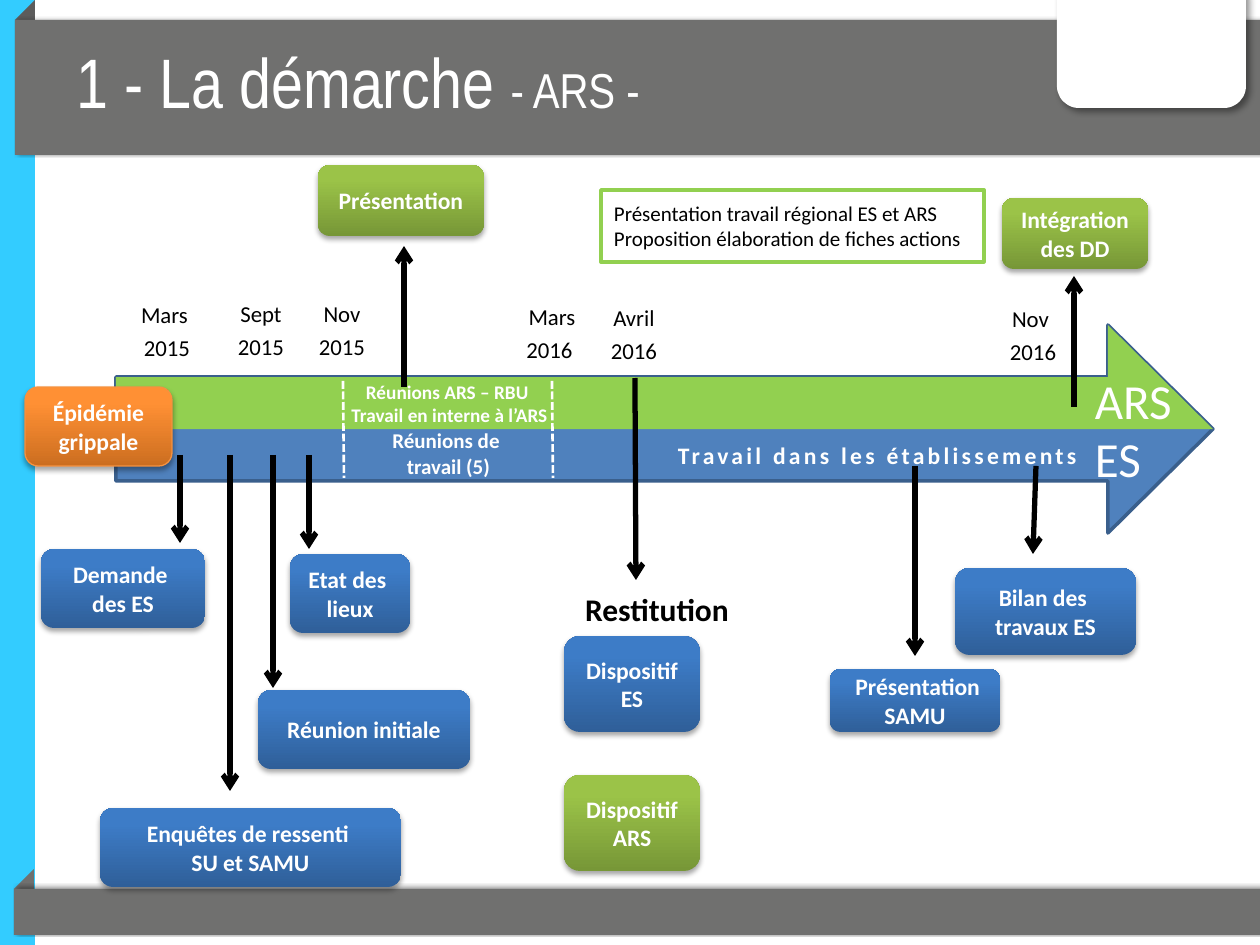
import lxml.etree
import pptx
import pptx.dml.color
import pptx.enum.dml
import pptx.enum.shapes
import pptx.enum.text
import pptx.oxml.ns
import pptx.util

SCALE = 914400 / 126  # EMU in one px
RGB = pptx.dml.color.RGBColor
SHAPE = pptx.enum.shapes.MSO_SHAPE
ALIGN = pptx.enum.text.PP_ALIGN
ANCHOR = pptx.enum.text.MSO_ANCHOR
WHITE, BLACK = RGB(0xFF, 0xFF, 0xFF), RGB(0, 0, 0)
CYAN, GREY, DARK_GREY = RGB(0x33, 0xCC, 0xFF), RGB(0x70, 0x70, 0x6F), RGB(0x5C, 0x5C, 0x5C)
GREEN, BLUE, NAVY = RGB(0x92, 0xD0, 0x50), RGB(0x4F, 0x81, 0xBD), RGB(0x3A, 0x5F, 0x8C)
ORANGE_EDGE = RGB(0xF6, 0x92, 0x40)
# Gradients: bottom colour, top colour
BLUE_FADE = RGB(0x2F, 0x5F, 0x99), RGB(0x3D, 0x7C, 0xC7)
GREEN_FADE = RGB(0x77, 0x97, 0x37), RGB(0x9B, 0xC3, 0x48)
ORANGE_FADE = RGB(0xCC, 0x6E, 0x20), RGB(0xFF, 0x90, 0x34)
# Shadows: opacity %, blur pt, distance pt, direction in degrees
CARD_SHADOW = 35, 3.1, 1.8, 90


def px(length):
    return pptx.util.Emu(round(length * SCALE))


def inside(box, left, top, width, height):
    return box[0] + left, box[1] + top, width, height


def add_element(parent, tag, **attributes):
    element = lxml.etree.SubElement(parent, pptx.oxml.ns.qn(tag))
    for name, value in attributes.items():
        element.set(name, str(value))
    return element


def style_shape(shape, fill, line=None, line_width=2, shadow=None):
    if isinstance(fill, RGB):
        shape.fill.solid()
        shape.fill.fore_color.rgb = fill
    else:
        shape.fill.gradient()
        shape.fill.gradient_angle = 90
        for stop, position, color in zip(shape.fill.gradient_stops, (0, 0.8), fill):
            stop.position = position
            stop.color.rgb = color
    if line is None:
        shape.line.fill.background()
    else:
        shape.line.color.rgb = line
        shape.line.width = pptx.util.Pt(line_width)
    shape.shadow.inherit = False
    if shadow:
        opacity, blur, distance, direction = shadow
        effects = shape._element.spPr.find(pptx.oxml.ns.qn("a:effectLst"))
        outer = add_element(effects, "a:outerShdw", blurRad=round(blur * 12700),
                            dist=round(distance * 12700), dir=direction * 60000, rotWithShape=0)
        color = add_element(outer, "a:srgbClr", val="000000")
        add_element(color, "a:alpha", val=opacity * 1000)


def add_preset(slide, kind, box, fill, **style):
    shape = slide.shapes.add_shape(kind, *map(px, box))
    style_shape(shape, fill, **style)
    return shape


def add_outline(slide, points, fill):
    builder = slide.shapes.build_freeform(*points[0], scale=SCALE)
    builder.add_line_segments(points[1:], close=True)
    style_shape(builder.convert_to_shape(), fill)


def write(shape, lines, size, color=WHITE, bold=False, align=ALIGN.CENTER, anchor=ANCHOR.MIDDLE,
          insets=(13, 6), font="Calibri", line_spacing=None, space_after=None, tracking=None):
    """Each line is a text, or a list of (text, size) runs."""
    frame = shape.text_frame
    frame.word_wrap = True
    frame.vertical_anchor = anchor
    frame.margin_left = frame.margin_right = px(insets[0])
    frame.margin_top = frame.margin_bottom = px(insets[1])
    for index, line in enumerate(lines):
        paragraph = frame.add_paragraph() if index else frame.paragraphs[0]
        paragraph.alignment = align
        if line_spacing:
            paragraph.line_spacing = line_spacing
            paragraph.space_after = pptx.util.Pt(space_after)
        for text, run_size in ([(line, size)] if isinstance(line, str) else line):
            run = paragraph.add_run()
            run.text = text
            run.font.name, run.font.size = font, pptx.util.Pt(run_size)
            run.font.bold, run.font.color.rgb = bold, color
            if tracking:
                run._r.get_or_add_rPr().set("spc", str(tracking))


def add_label(slide, box, lines, size, **style):
    write(slide.shapes.add_textbox(*map(px, box)), lines, size, **style)


def add_card(slide, box, lines, fade, line=None):
    card = add_preset(slide, SHAPE.ROUNDED_RECTANGLE, box, fade,
                      line=line, line_width=0.75, shadow=CARD_SHADOW)
    write(card, lines, 13.5, bold=True, insets=(9, 5))


def add_line(slide, box, ends, color=BLACK, width=3, dashed=False):
    x1, y1, x2, y2 = ends
    connector = slide.shapes.add_connector(
        pptx.enum.shapes.MSO_CONNECTOR.STRAIGHT,
        px(box[0] + x1), px(box[1] + y1), px(box[0] + x2), px(box[1] + y2))
    connector.line.color.rgb = color
    connector.line.width = pptx.util.Pt(width)
    properties = connector._element.spPr
    if dashed:
        connector.line.dash_style = pptx.enum.dml.MSO_LINE.SQUARE_DOT
    else:
        add_element(properties.find(pptx.oxml.ns.qn("a:ln")), "a:tailEnd", type="arrow")
    add_element(properties, "a:effectLst")


def draw_band(slide, box, fold_color, shadow):
    """Grey bar with a folded corner above its left end."""
    left, top, width, height = box
    fold = 20
    add_outline(slide, [(left, top + fold), (left + fold, top), (left + fold, top + fold)], fold_color)
    add_preset(slide, SHAPE.RECTANGLE, inside(box, 0, fold, width, height - fold), GREY, shadow=shadow)


def draw_header(slide, box):
    draw_band(slide, box, DARK_GREY, (41, 2, 2, 350))
    add_preset(slide, SHAPE.ROUNDED_RECTANGLE, inside(box, 1042, -24, 189, 132), WHITE,
               shadow=(40, 4, 3, 45))
    add_label(slide, inside(box, 49, 26, 962, 110), [[("1 - La démarche ", 40), ("- ARS -", 28)]], 40,
              align=ALIGN.LEFT, font="Arial Narrow")


def draw_arrow(slide, box):
    left, top, width, height = box
    right, middle, neck = left + width, top + height / 2, left + width - 105
    body = top + height / 4
    arrow = add_preset(slide, SHAPE.RIGHT_ARROW, box, BLUE, line=NAVY)
    arrow.adjustments[1] = 105 / height
    # Upper half
    add_outline(slide, [(left, body), (neck, body), (neck, top), (right, middle), (left, middle)], GREEN)
    # Work phases
    for x in (227, 436):
        add_line(slide, box, (x, 56, x + 1, 153), WHITE, 1.5, dashed=True)
    add_label(slide, inside(box, 252, 97, 161, 92), ["Réunions de ", "travail (5)"], 12,
              bold=True, anchor=ANCHOR.TOP)
    add_label(slide, inside(box, 218, 49, 231, 59), ["Réunions ARS – RBU ", "Travail en interne à l’ARS"], 11,
              bold=True, anchor=ANCHOR.TOP)
    add_label(slide, inside(box, 549, 110, 580, 42), ["Travail dans les établissements"], 13.5,
              bold=True, align=ALIGN.LEFT, anchor=ANCHOR.TOP, tracking=190)
    for text, y in (("ARS", 39), ("ES", 97)):
        add_label(slide, inside(box, 966, y, 115, 72), [text], 28, align=ALIGN.LEFT, anchor=ANCHOR.TOP)
    # Starting point
    add_card(slide, inside(box, -91, 62, 147, 79), ["Épidémie grippale"], ORANGE_FADE, ORANGE_EDGE)


def draw_dates(slide, box):
    dates = [(0, 0, "Mars ", "2015"), (94, -1, "Sept", "2015"), (175, -1, "Nov", "2015"),
             (385, 2, "Mars", "2016 "), (467, 3, "Avril", "2016"), (866, 4, "Nov ", "2016")]
    for x, y, month, year in dates:
        add_label(slide, inside(box, x, y, 66, box[3]), [month, year], 13, color=BLACK,
                  insets=(0, 18), line_spacing=0.9, space_after=4.5)


def draw_upper_events(slide, box):
    add_card(slide, inside(box, 0, 0, 166, 71), ["Présentation"], GREEN_FADE)
    add_card(slide, inside(box, 684, 33, 146, 71), ["Intégration des DD"], GREEN_FADE)
    for ends in ((86, 222, 86, 81), (756, 242, 756, 111)):
        add_line(slide, box, ends)
    note = add_preset(slide, SHAPE.RECTANGLE, inside(box, 283, 25, 383, 72), WHITE, line=GREEN)
    write(note, ["Présentation travail régional ES et ARS", "Proposition élaboration de fiches actions"],
          12, color=BLACK, align=ALIGN.LEFT)


def draw_lower_events(slide, box):
    for ends in ((139, 0, 139, 88), (268, 0, 268, 94), (232, 0, 232, 233), (189, 0, 189, 336),
                 (594, -77, 595, 125), (874, 11, 874, 201), (995, 11, 992, 99)):
        add_line(slide, box, ends)
    cards = [((0, 94, 164, 79), ["Demande ", "des ES"], BLUE_FADE),
             ((249, 99, 120, 79), ["Etat des ", "lieux"], BLUE_FADE),
             ((217, 235, 212, 79), ["Réunion initiale"], BLUE_FADE),
             ((59, 353, 301, 79), ["Enquêtes de ressenti ", "SU et SAMU"], BLUE_FADE),
             ((523, 181, 136, 96), ["Dispositif ES"], BLUE_FADE),
             ((523, 320, 136, 96), ["Dispositif ARS"], GREEN_FADE),
             ((789, 214, 170, 63), [" Présentation SAMU"], BLUE_FADE),
             ((914, 113, 181, 87), ["Bilan des ", "travaux ES"], BLUE_FADE)]
    for place, lines, fade in cards:
        add_card(slide, inside(box, *place), lines, fade)
    add_label(slide, inside(box, 437, 130, 358, 45), ["Restitution"], 18, color=BLACK,
              bold=True, anchor=ANCHOR.TOP, insets=(9, 5))


def main():
    presentation = pptx.Presentation()
    presentation.slide_width, presentation.slide_height = px(1260), px(945)
    slide = presentation.slides.add_slide(presentation.slide_layouts[6])
    add_preset(slide, SHAPE.RECTANGLE, (0, 0, 35, 945), CYAN)
    draw_band(slide, (14, 869, 1246, 66), GREY, (41, 2, 2, 320))
    draw_header(slide, (15, 0, 1245, 155))
    draw_arrow(slide, (116, 325, 1097, 208))
    draw_dates(slide, (134, 282, 932, 101))
    draw_upper_events(slide, (318, 165, 830, 242))
    draw_lower_events(slide, (41, 455, 1095, 432))
    presentation.save("out.pptx")


if __name__ == "__main__":
    main()
